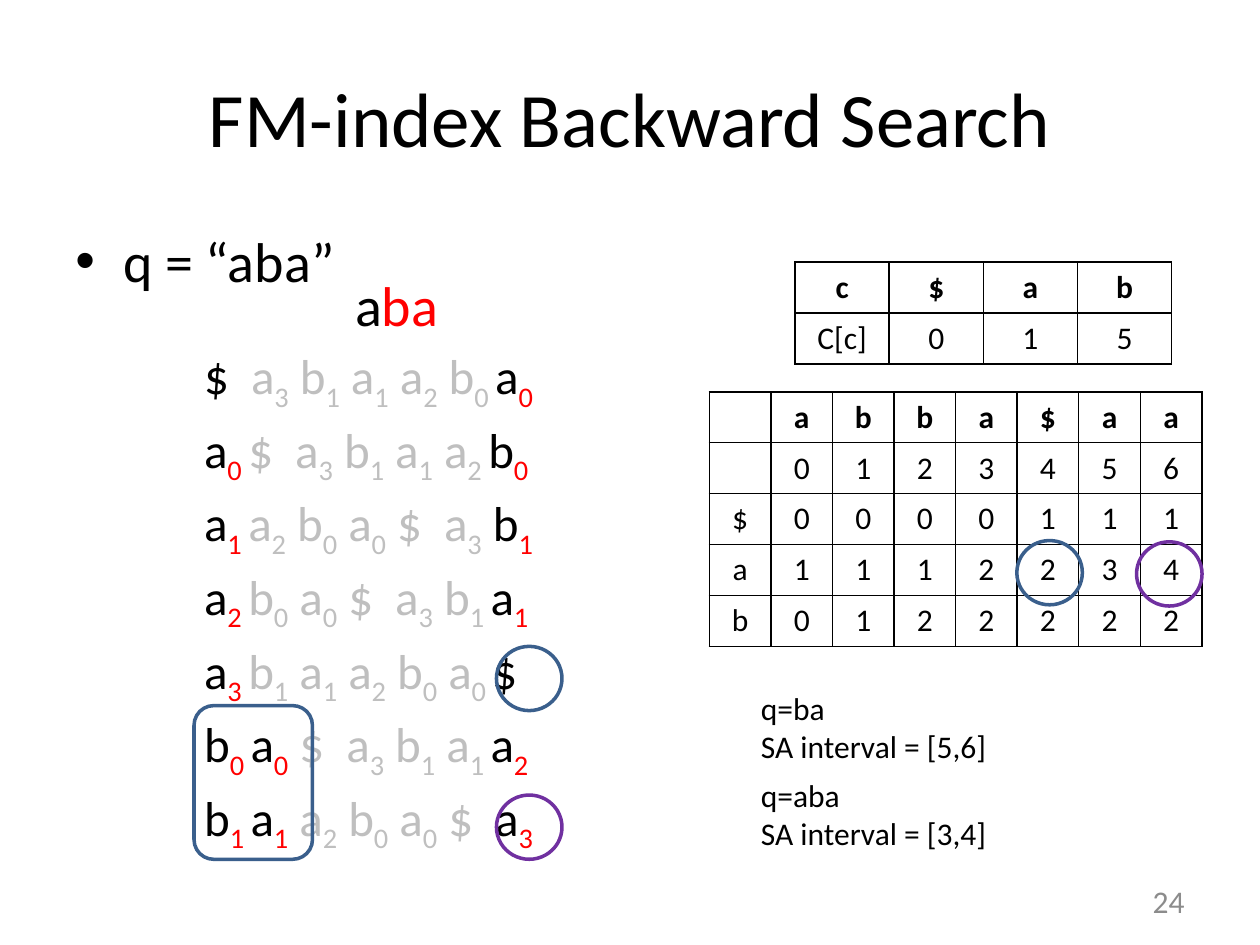
from itertools import groupby

from lxml.etree import SubElement
from pptx import Presentation
from pptx.dml.color import RGBColor
from pptx.enum.shapes import MSO_SHAPE as Preset
from pptx.enum.text import MSO_ANCHOR as Anchor, PP_ALIGN as Align
from pptx.oxml.ns import qn
from pptx.util import Inches, Pt

COLORS = {
    "ink": "000000",
    "accent": "FF0000",
    "faded": "BFBFBF",
    "number": "8C8C8C",
    "blue": "3A5F8C",
    "purple": "7030A0",
    "paper": "FFFFFF",
}
COLUMNS, ROWS = 100, 75


def subscript_pieces(text):
    stem = text.rstrip()
    pieces = [["".join(chars), low] for low, chars in groupby(stem, str.isdigit)]
    pieces[-1][0] += text[len(stem):]
    return pieces


class SlideBuilder:
    font = "Calibri"

    def __init__(self, deck):
        self.deck = deck
        self.slide = deck.slides.add_slide(deck.slide_layouts[5])

    def area(self, left, top, width, height):
        across, down = self.deck.slide_width / COLUMNS, self.deck.slide_height / ROWS
        return [round(n * unit) for n, unit in
                zip((left, top, width, height), (across, down, across, down))]

    def style(self, font, size, color="ink", bold=False):
        font.name, font.size, font.bold = self.font, Pt(size), bold
        font.color.rgb = RGBColor.from_string(COLORS[color])

    def title(self, text, *area):
        heading = self.slide.shapes.title
        heading.left, heading.top, heading.width, heading.height = self.area(*area)
        frame = heading.text_frame
        frame.text, frame.vertical_anchor = text, Anchor.MIDDLE
        frame.paragraphs[0].alignment = Align.CENTER
        self.style(frame.paragraphs[0].font, 44)

    def text(self, lines, *area, size=18, color="ink", align=Align.LEFT,
             anchor=Anchor.TOP, wrap=False):
        frame = self.slide.shapes.add_textbox(*self.area(*area)).text_frame
        frame.word_wrap, frame.vertical_anchor = wrap, anchor
        frame.text = "\n".join(lines)
        for paragraph in frame.paragraphs:
            paragraph.alignment = align
            self.style(paragraph.font, size, color)
        return frame

    def bullet(self, text, *area, size):
        properties = self.text([text], *area, size=size, wrap=True).paragraphs[0]._p.get_or_add_pPr()
        properties.set("marL", str(Inches(0.38)))
        properties.set("indent", str(-Inches(0.38)))
        mark_font = SubElement(properties, qn("a:buFont"), typeface="Arial")
        mark = SubElement(properties, qn("a:buChar"), char="•")
        properties.insert(0, mark_font)
        properties.insert(1, mark)

    def runs(self, paragraph, pieces, size):
        for text, color, low in pieces:
            run = paragraph.add_run()
            run.text = text
            self.style(run.font, size, color)
            if low:
                run._r.get_or_add_rPr().set("baseline", "-25000")

    def border(self, cell, color):
        properties = cell._tc.get_or_add_tcPr()
        for position, side in enumerate(("a:lnL", "a:lnR", "a:lnT", "a:lnB")):
            line = SubElement(properties, qn(side), w=str(Pt(1)))
            fill = SubElement(line, qn("a:solidFill"))
            SubElement(fill, qn("a:srgbClr"), val=COLORS[color])
            properties.insert(position, line)

    def grid(self, row_count, column_count, *area, border="ink"):
        table = self.slide.shapes.add_table(row_count, column_count, *self.area(*area)).table
        table.first_row = table.horz_banding = False
        for cell in table.iter_cells():
            cell.fill.background()
            self.border(cell, border)
        return table

    def value_table(self, rows, *area):
        table = self.grid(len(rows), len(rows[0]), *area)
        for y, row in enumerate(rows):
            for x, value in enumerate(row):
                cell = table.cell(y, x)
                cell.text = value
                paragraph = cell.text_frame.paragraphs[0]
                paragraph.alignment = Align.CENTER
                self.style(paragraph.font, 18, bold=y == 0)

    def rotation_table(self, rotations, *area):
        table = self.grid(len(rotations), 1, *area, border="paper")
        for y, (*head, middle, tail) in enumerate(rotations):
            cell = table.cell(y, 0)
            cell.vertical_anchor = Anchor.MIDDLE
            cell.margin_left = cell.margin_right = cell.margin_top = Inches(0.01)
            cell.margin_bottom = 0
            pieces = []
            for segment, is_middle in [(s, False) for s in head] + [(middle, True), (tail, False)]:
                for text, low in subscript_pieces(segment):
                    color = "faded" if is_middle else "accent" if low else "ink"
                    pieces.append((text, color, low))
            self.runs(cell.text_frame.paragraphs[0], pieces, 28)

    def outline(self, preset, color, *area):
        marker = self.slide.shapes.add_shape(preset, *self.area(*area))
        marker.shadow.inherit = False
        marker.fill.background()
        marker.line.color.rgb = RGBColor.from_string(COLORS[color])
        marker.line.width = Pt(2)


def main():
    deck = Presentation()
    deck.slide_width, deck.slide_height = Inches(10), Inches(7.5)
    page = SlideBuilder(deck)

    page.title("FM-index Backward Search", 5, 3, 90, 12.5)
    page.bullet("q = “aba”", 5, 17.5, 90, 49.5, size=32)
    page.text(["24"], 71.7, 69.5, 23.3, 4, color="number", align=Align.RIGHT,
              anchor=Anchor.MIDDLE, wrap=True)

    page.rotation_table([
        ("$  ", "a3 b1 a1 a2 b0 ", "a0"),
        ("a0 ", "$  a3 b1 a1 a2 ", "b0"),
        ("a1 ", "a2 b0 a0 $  a3", " b1"),
        ("a2 ", "b0 a0 $  a3 b1 ", "a1"),
        ("a3 ", "b1 a1 a2 b0 a0 ", "$"),
        ("b0 ", "a0", " $  a3 b1 a1 ", "a2"),
        ("b1 ", "a1", " a2 b0 a0 $  ", "a3"),
    ], 16.1, 27.3, 31.5, 40.9)

    query = page.text([""], 27.2, 21, 8.7, 6.4).paragraphs[0]
    page.runs(query, [("a", "ink", False), ("ba", "accent", False)], 32)
    page.outline(Preset.ROUNDED_RECTANGLE, "blue", 15.4, 56, 9.4, 12.2)

    page.value_table([["c", "$", "a", "b"], ["C[c]", "0", "1", "5"]], 63.1, 20.8, 29.9, 8.1)
    page.value_table([
        ["", *"abba$aa"],
        ["", *"0123456"],
        [*"$0000111"],
        [*"a1112234"],
        [*"b0122222"],
    ], 56.3, 31.1, 39.1, 20.2)

    for pattern, interval, top in (("ba", "[5,6]", 54.2), ("aba", "[3,4]", 61.1)):
        page.text([f"q={pattern}", f"SA interval = {interval}"], 59.4, top, 20.1, 7.1)
    for color, left, top in (("blue", 39.4, 51.3), ("blue", 80.7, 42.9),
                             ("purple", 39.4, 63.1), ("purple", 90.2, 43)):
        page.outline(Preset.OVAL, color, left, top, 5.2, 5.1)

    deck.save("out.pptx")


if __name__ == "__main__":
    main()
